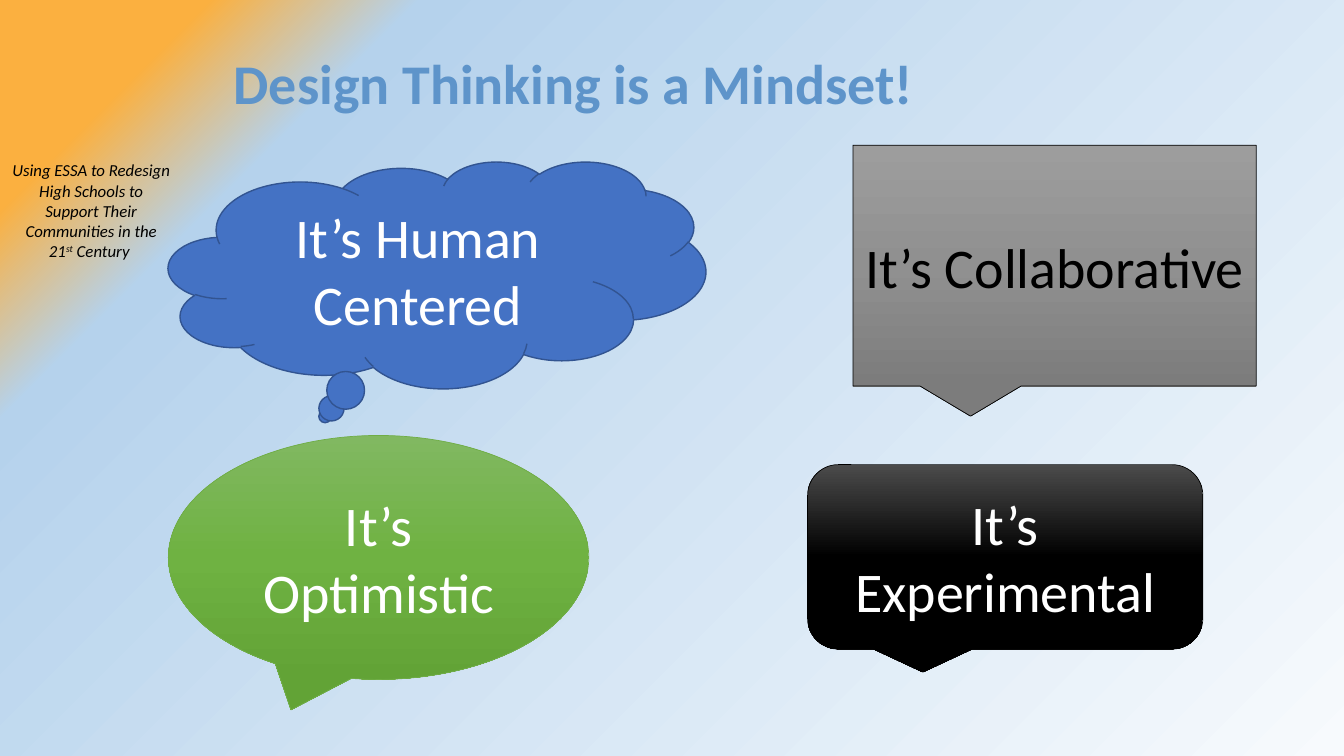
"""Build the slide on design thinking as a mindset."""
from dataclasses import dataclass

from lxml.etree import SubElement
from pptx import Presentation
from pptx.dml.color import RGBColor
from pptx.enum.shapes import MSO_SHAPE
from pptx.enum.text import MSO_ANCHOR, PP_ALIGN
from pptx.oxml.ns import qn
from pptx.util import Inches, Pt


@dataclass(frozen=True)
class Theme:
    font: str = "Calibri"
    large: int = 40
    small: int = 12
    black: str = "000000"
    white: str = "FFFFFF"
    heading: str = "5E94CA"
    cloud: str = "4472C4"
    cloud_edge: str = "325491"
    green_edge: str = "70AD47"
    grays: tuple = ((0, "9D9D9D"), (50, "909090"), (100, "7C7C7C"))
    blacks: tuple = ((0, "4B4B4B"), (50, "000000"), (100, "000000"))
    greens: tuple = ((0, "81B861"), (50, "6FB242"), (100, "62A336"))
    backdrop: tuple = ((0, "F7FAFD"), (80, "B5D2EC", 50),
                       (90, "FBB040", 55), (100, "FBB040"))


theme = Theme()


def set_stops(owner, stops):
    """Replace the stops of the owner's gradient and return the gradient."""
    gradient = next(owner.iter(qn("a:gradFill")))
    stop_list = gradient.find(qn("a:gsLst"))
    for old_stop in list(stop_list):
        stop_list.remove(old_stop)
    for position, color, *alpha in stops:
        stop = SubElement(stop_list, qn("a:gs"), pos=str(position * 1000))
        tint = SubElement(stop, qn("a:srgbClr"), val=color)
        for percent in alpha:
            SubElement(tint, qn("a:alpha"), val=str(percent * 1000))
    return gradient


def style_text(frame, size, color, align, bold=False, italic=False):
    """Wrap the frame and format every run in it."""
    frame.word_wrap = True
    for paragraph in frame.paragraphs:
        paragraph.alignment = align
        for run in paragraph.runs:
            run.font.name = theme.font
            run.font.size = Pt(size)
            run.font.bold = bold
            run.font.italic = italic
            run.font.color.rgb = RGBColor.from_string(color)


presentation = Presentation()
presentation.slide_width = Inches(13.33)
presentation.slide_height = Inches(7.5)
slide = presentation.slides.add_slide(presentation.slide_layouts[6])

slide.background.fill.gradient()
backdrop = set_stops(slide.element, theme.backdrop)
backdrop.remove(backdrop.find(qn("a:lin")))
glow = SubElement(backdrop, qn("a:path"), path="circle")
SubElement(glow, qn("a:fillToRect"), l="100000", t="100000")

program = slide.shapes.add_textbox(Inches(0.02), Inches(1.54), Inches(1.77), Inches(1.11))
program_line = program.text_frame.paragraphs[0]
program_line.text = "Using ESSA to Redesign High Schools to Support Their Communities in the 21"
ordinal = program_line.add_run()
ordinal.text = "st"
program_line.add_run().text = " Century "
style_text(program.text_frame, theme.small, theme.black, PP_ALIGN.CENTER, italic=True)
ordinal.font._element.set("baseline", "30000")

mindsets = [
    (MSO_SHAPE.RECTANGULAR_CALLOUT, (8.46, 1.44, 4, 2.39), "It’s Collaborative",
     theme.grays, theme.black, 0.5, theme.black),
    (MSO_SHAPE.ROUNDED_RECTANGULAR_CALLOUT, (8.01, 4.61, 3.92, 1.83), "It’s\nExperimental",
     theme.blacks, theme.black, 0.5, theme.white),
    (MSO_SHAPE.OVAL_CALLOUT, (1.67, 4.32, 4.17, 2.42), "It’s Optimistic",
     theme.greens, theme.green_edge, 0.5, theme.white),
    (MSO_SHAPE.CLOUD_CALLOUT, (1.67, 1.6, 5.33, 2.25), "It’s Human Centered",
     theme.cloud, theme.cloud_edge, 1, theme.white),
]
for preset, box, wording, fill, edge, edge_width, ink in mindsets:
    callout = slide.shapes.add_shape(preset, *map(Inches, box))
    callout.shadow.inherit = False
    if isinstance(fill, str):
        callout.fill.solid()
        callout.fill.fore_color.rgb = RGBColor.from_string(fill)
    else:
        callout.fill.gradient()
        callout.fill.gradient_angle = 270
        set_stops(callout.element, fill)
    callout.line.color.rgb = RGBColor.from_string(edge)
    callout.line.width = Pt(edge_width)
    callout.text_frame.text = wording
    callout.text_frame.vertical_anchor = MSO_ANCHOR.MIDDLE
    style_text(callout.text_frame, theme.large, ink, PP_ALIGN.CENTER)

heading = slide.shapes.add_textbox(Inches(2.22), Inches(0.43), Inches(7.67), Inches(0.77))
heading.text_frame.text = "Design Thinking is a Mindset!"
style_text(heading.text_frame, theme.large, theme.heading, PP_ALIGN.LEFT, bold=True)

presentation.save("out.pptx")
